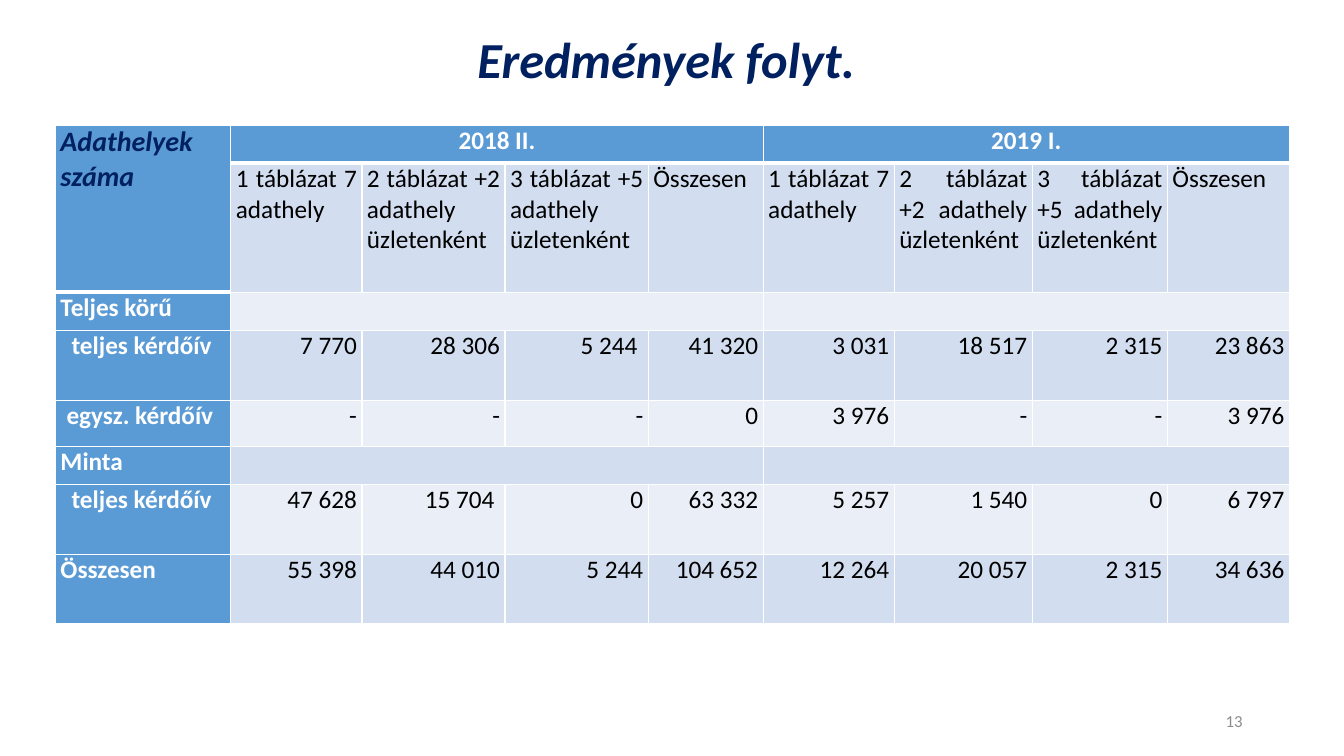
from lxml import etree
from pptx import Presentation, util as u
from pptx.dml.color import RGBColor
from pptx.enum import text
from pptx.oxml.ns import qn

WIDTH, HEIGHT = 13.33, 7.5
NAVY, BLUE, WHITE, BLACK, GREY = "002060", "5B9BD5", "FFFFFF", "000000", "8C8C8C"
BANDS = ["EAEFF7", "D2DEEF"]
ALIGN = text.PP_ALIGN

COLUMNS = [1.74, 1.3, 1.42, 1.42, 1.14, 1.3, 1.37, 1.34, 1.21]
ROWS = [0.38, 1.28, 0.38, 0.69, 0.46, 0.38, 0.69, 0.69]
YEARS = ["2018 II.", "2019 I."]
YEAR_SPAN = 4
MEASURES = ["1 táblázat 7 adathely", "2 táblázat +2 adathely üzletenként",
            "3 táblázat +5 adathely üzletenként", "Összesen"]
# label, label indent in inches, values
BODY = [
    ("Teljes körű", 0, []),
    ("teljes kérdőív", 0.11, ["7 770", "28 306", "5 244 ", "41 320",
                              "3 031", "18 517", "2 315", "23 863"]),
    ("egysz. kérdőív", 0.06, ["-", "-", "-", "0", "3 976", "-", "-", "3 976"]),
    ("Minta", 0, []),
    ("teljes kérdőív", 0.11, ["47 628", "15 704 ", "0", "63 332",
                              "5 257", "1 540", "0", "6 797"]),
    ("Összesen", 0, ["55 398", "44 010", "5 244", "104 652",
                     "12 264", "20 057", "2 315", "34 636"]),
]


def color(code):
    return RGBColor.from_string(code)


def write(frame, words, align, size, code, bold=False, italic=False):
    para = frame.paragraphs[0]
    para.alignment = align
    span = para.add_run()
    span.text = words
    font = span.font
    font.name, font.size = "Calibri", u.Pt(size)
    font.bold, font.italic = bold, italic
    font.color.rgb = color(code)


def add_text(page, left, top, width, height, words, align, size, code, **style):
    """Place a text box by shares of the slide's size."""
    box = page.shapes.add_textbox(
        u.Inches(left * WIDTH), u.Inches(top * HEIGHT),
        u.Inches(width * WIDTH), u.Inches(height * HEIGHT))
    box.text_frame.word_wrap = True
    write(box.text_frame, words, align, size, code, **style)
    return box


def add_borders(cell, top, bottom):
    properties = cell._tc.get_or_add_tcPr()
    for place, (side, points) in enumerate(
            [("L", 1), ("R", 1), ("T", top), ("B", bottom)]):
        line = etree.Element(qn(f"a:ln{side}"), w=str(u.Pt(points)))
        fill = etree.SubElement(line, qn("a:solidFill"))
        etree.SubElement(fill, qn("a:srgbClr"), val=WHITE)
        properties.insert(place, line)


def is_heavy_below(row, column):
    """The header ends one row lower in the label column."""
    return row == (1 if column == 0 else 0)


def style_cells(table):
    for row in range(len(ROWS)):
        for column in range(len(COLUMNS)):
            cell = table.cell(row, column)
            cell.margin_left = cell.margin_right = u.Inches(0.05)
            cell.margin_top = cell.margin_bottom = 0
            cell.fill.solid()
            header = row == 0 or column == 0
            cell.fill.fore_color.rgb = color(BLUE if header else BANDS[row % 2])
            add_borders(cell, 3 if is_heavy_below(row - 1, column) else 1,
                        3 if is_heavy_below(row, column) else 1)


def merge_years(table, row):
    """Merge the columns of each year and return the first cells."""
    starts = range(1, len(COLUMNS), YEAR_SPAN)
    for start in starts:
        table.cell(row, start).merge(table.cell(row, start + YEAR_SPAN - 1))
    return [table.cell(row, start) for start in starts]


def fill_header(table):
    corner = table.cell(0, 0)
    corner.merge(table.cell(1, 0))
    write(corner.text_frame, "Adathelyek száma", ALIGN.JUSTIFY, 20, NAVY,
          bold=True, italic=True)
    for cell, year in zip(merge_years(table, 0), YEARS):
        write(cell.text_frame, year, ALIGN.CENTER, 18, WHITE, bold=True)
    for column, measure in enumerate(MEASURES * len(YEARS), 1):
        write(table.cell(1, column).text_frame, measure, ALIGN.JUSTIFY, 18, BLACK)


def fill_body(table):
    for row, (label, indent, values) in enumerate(BODY, 2):
        cell = table.cell(row, 0)
        cell.margin_left = u.Inches(0.05 + indent)
        write(cell.text_frame, label, ALIGN.JUSTIFY, 18, WHITE, bold=True)
        if not values:
            merge_years(table, row)
        for column, value in enumerate(values, 1):
            write(table.cell(row, column).text_frame, value, ALIGN.RIGHT, 18, BLACK)


def add_results(page):
    table = page.shapes.add_table(
        len(ROWS), len(COLUMNS), u.Inches(0.55), u.Inches(1.24),
        u.Inches(sum(COLUMNS)), u.Inches(sum(ROWS))).table
    for column, width in zip(table.columns, COLUMNS):
        column.width = u.Inches(width)
    for row, height in zip(table.rows, ROWS):
        row.height = u.Inches(height)
    style_cells(table)
    fill_header(table)
    fill_body(table)


def main():
    deck = Presentation()
    deck.slide_width, deck.slide_height = u.Inches(WIDTH), u.Inches(HEIGHT)
    page = deck.slides.add_slide(deck.slide_layouts[6])
    number = add_text(page, 0.707, 0.927, 0.225, 0.053, "13", ALIGN.RIGHT, 12, GREY)
    number.text_frame.vertical_anchor = text.MSO_ANCHOR.MIDDLE
    add_text(page, 0, 0.03, 1, 0.094, "Eredmények folyt. ", ALIGN.CENTER, 36, NAVY,
             bold=True, italic=True)
    add_results(page)
    deck.save("out.pptx")


if __name__ == "__main__":
    main()
